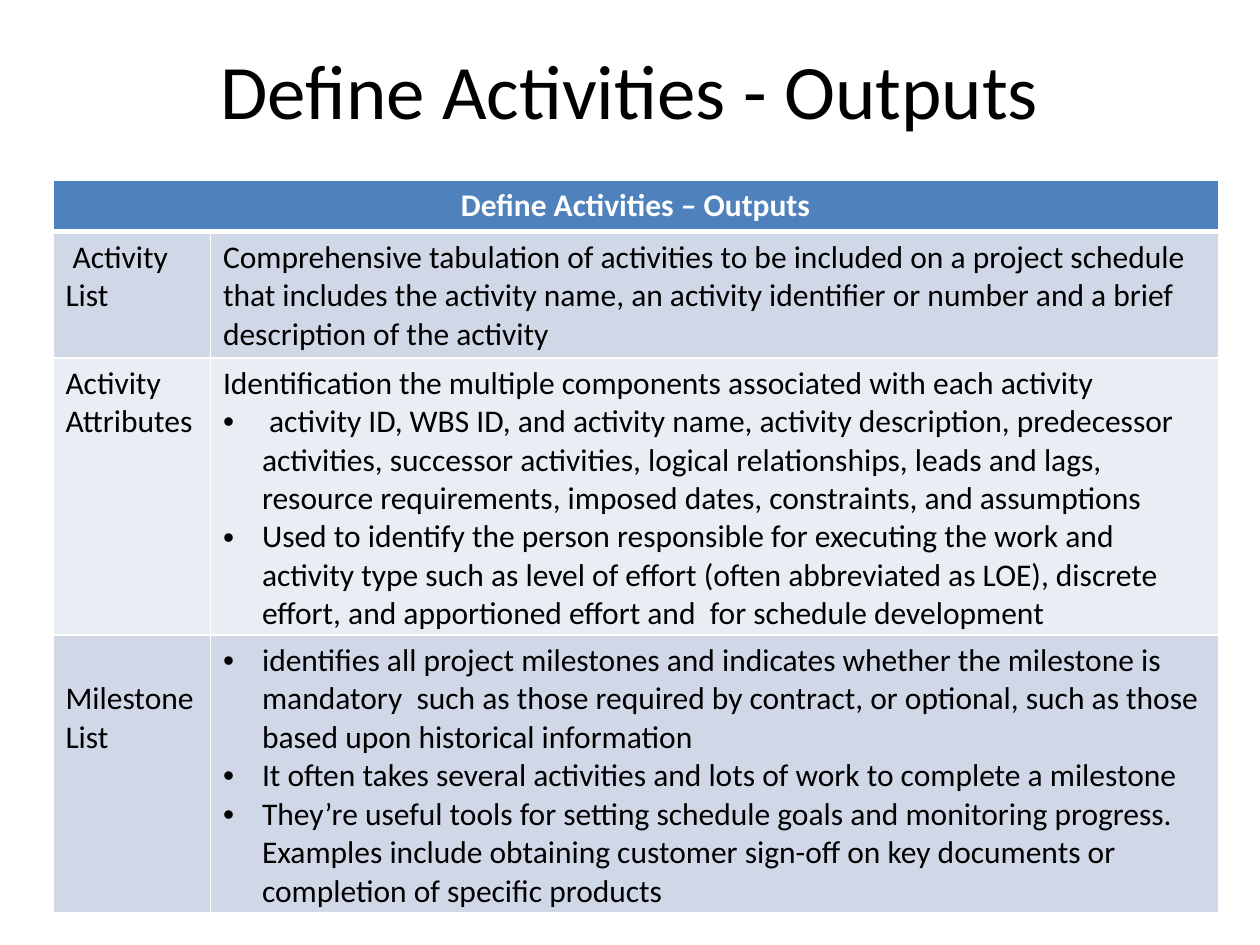
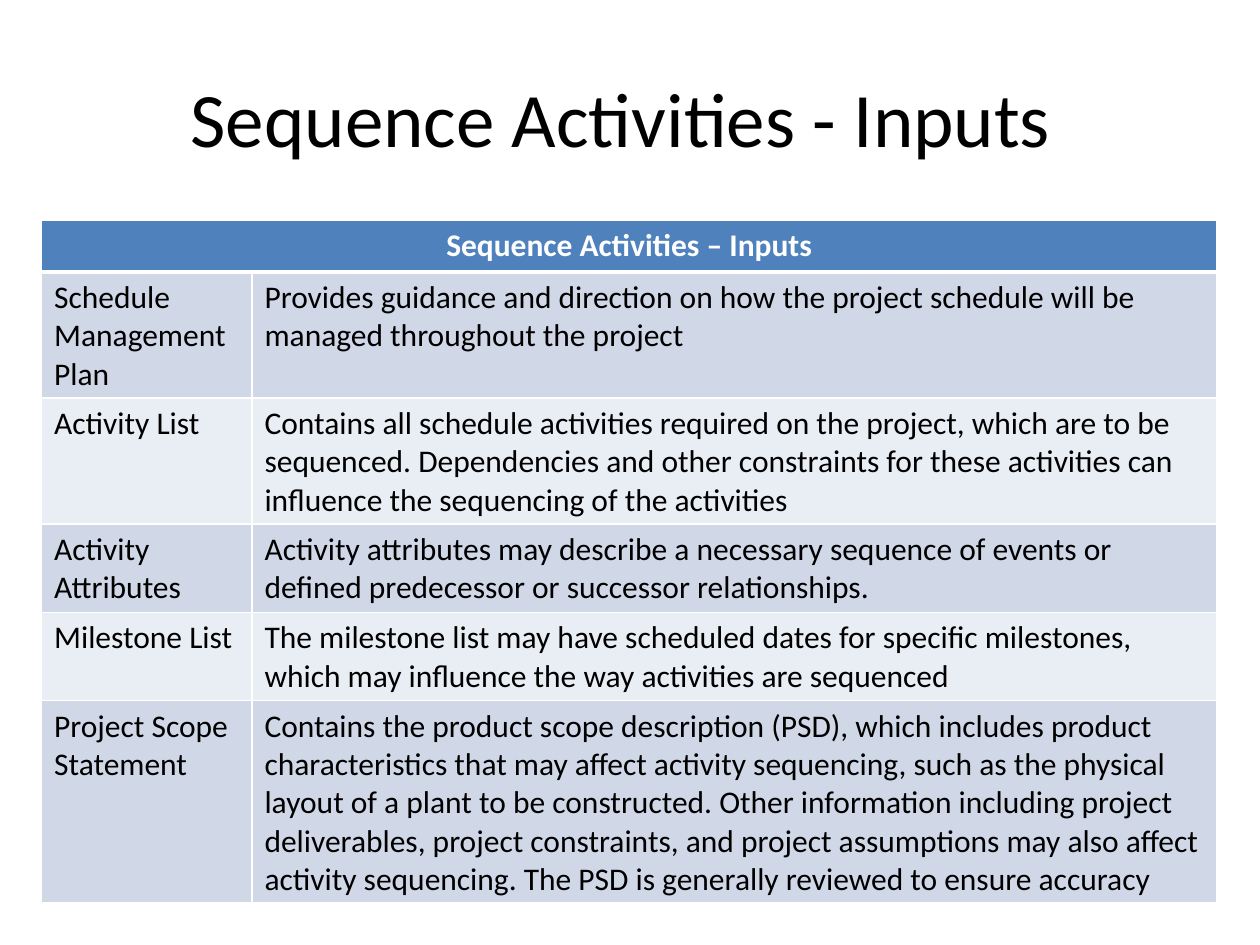
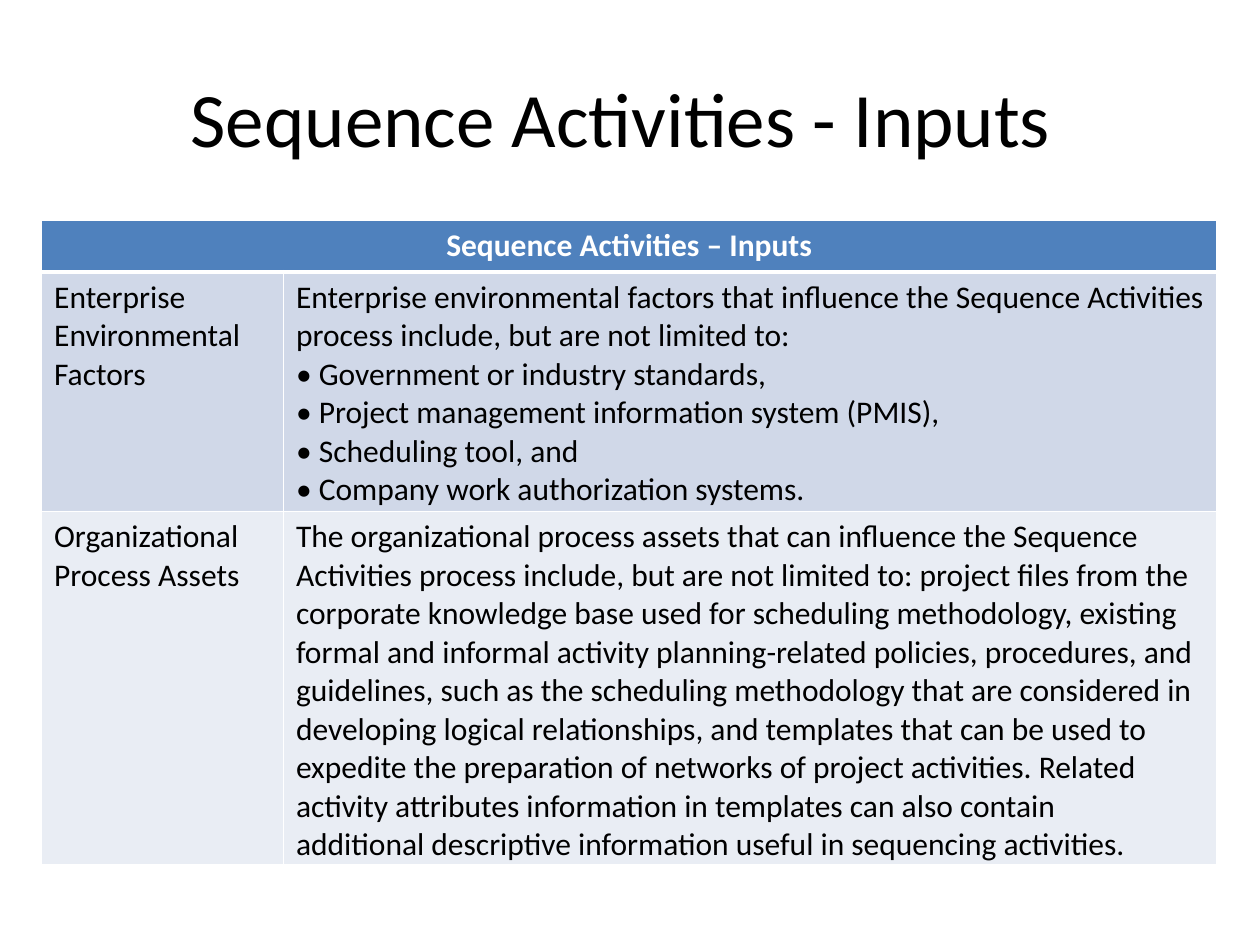
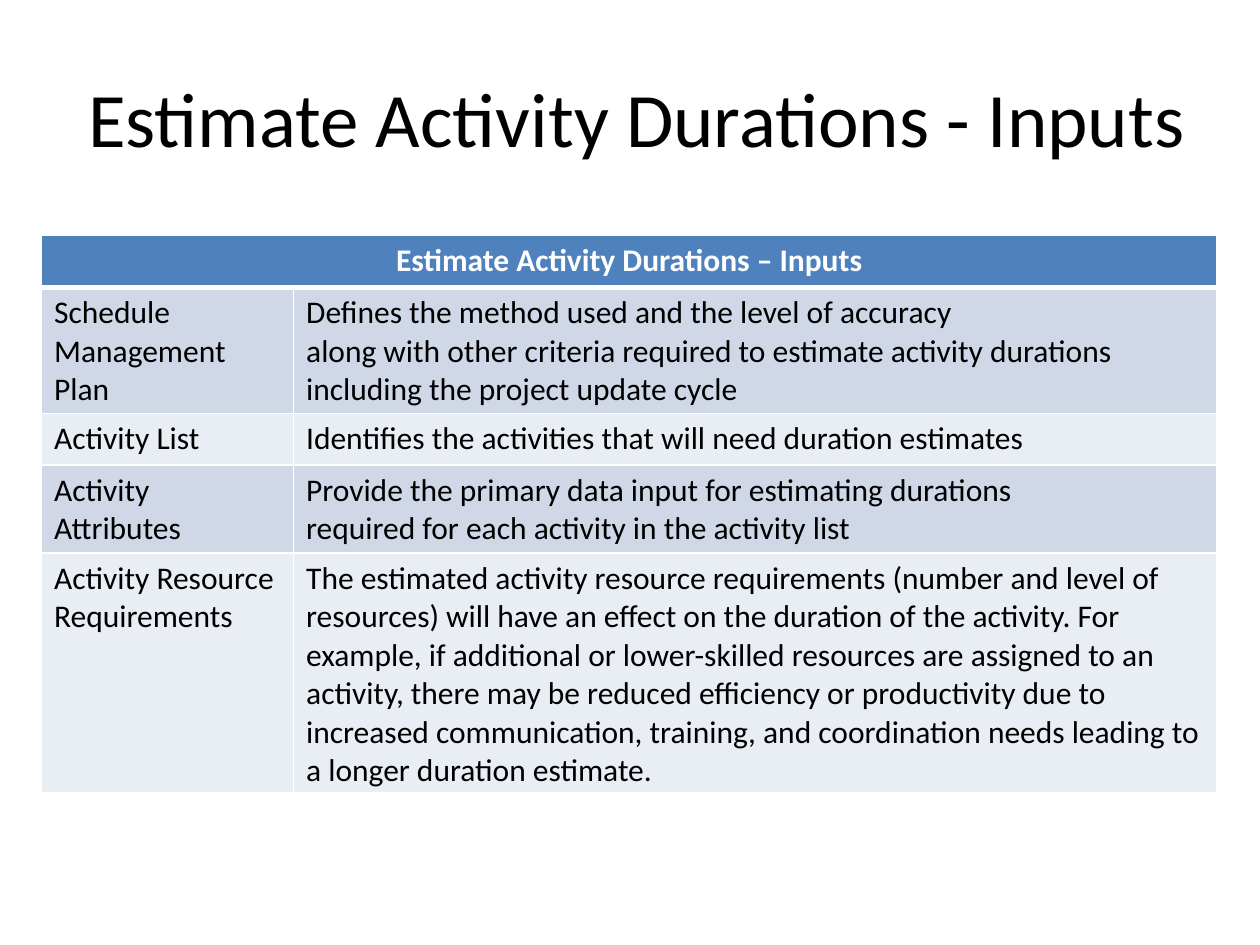
from dataclasses import dataclass

from lxml.etree import SubElement as add_element
from pptx import Presentation
from pptx.dml.color import RGBColor as Color
from pptx.enum.text import MSO_ANCHOR as Anchor, PP_ALIGN as Align
from pptx.oxml.ns import qn
from pptx.util import Inches, Pt


@dataclass(frozen=True)
class Theme:
    """Colours, font and type sizes shared by every slide."""
    font: str = "Calibri"
    title_size: int = 44
    table_size: int = 18
    ink: str = "000000"
    paper: str = "FFFFFF"
    header: str = "4F81BD"
    bands: tuple = ("D0D8E8", "E9EDF4")
    rule: int = 1
    header_rule: int = 3
    row_height: float = 0.41
    bullet_indent: float = 0.31


class Bullet(str):
    """A paragraph that carries a bullet."""


THEME = Theme()
TITLE_BOX = (0.5, 0.3, 9, 1.25)

PAGES = [
    {
        "title": "Define Activities - Outputs",
        "title_box": (0.5, 0.08, 9, 1.25),
        "heading": "Define Activities – Outputs",
        "table_box": (0.42, 1.43, 9.25, 5.81),
        "label_width": 1.25,
        "rows": [
            (" Activity List", [
                "Comprehensive tabulation of activities to be included on a project schedule "
                "that includes the activity name, an activity identifier or number and a brief "
                "description of the activity"]),
            ("Activity Attributes", [
                "Identification the multiple components associated with each activity",
                Bullet(" activity ID, WBS ID, and activity name, activity description, predecessor "
                       "activities, successor activities, logical relationships, leads and lags, "
                       "resource requirements, imposed dates, constraints, and assumptions"),
                Bullet("Used to identify the person responsible for executing the work and "
                       "activity type such as level of effort (often abbreviated as LOE), discrete "
                       "effort, and apportioned effort and  for schedule development")]),
            (" Milestone List", [
                Bullet("identifies all project milestones and indicates whether the milestone is "
                       "mandatory  such as those required by contract, or optional, such as those "
                       "based upon historical information"),
                Bullet("It often takes several activities and lots of work to complete a milestone"),
                Bullet("They’re useful tools for setting schedule goals and monitoring progress. "
                       "Examples include obtaining customer sign-off on key documents or "
                       "completion of specific products")]),
        ],
    },
    {
        "title": "Sequence Activities - Inputs ",
        "title_box": TITLE_BOX,
        "heading": "Sequence Activities – Inputs",
        "table_box": (0.33, 1.75, 9.33, 5.41),
        "label_width": 1.67,
        "rows": [
            ("Schedule Management Plan", [
                "Provides guidance and direction on how the project schedule will be "
                "managed throughout the project"]),
            ("Activity List", [
                "Contains all schedule activities required on the project, which are to be "
                "sequenced. Dependencies and other constraints for these activities can "
                "influence the sequencing of the activities"]),
            ("Activity Attributes", [
                "Activity attributes may describe a necessary sequence of events or "
                "defined predecessor or successor relationships."]),
            ("Milestone List", [
                "The milestone list may have scheduled dates for specific milestones, "
                "which may influence the way activities are sequenced"]),
            ("Project Scope Statement", [
                "Contains the product scope description (PSD), which includes product "
                "characteristics that may affect activity sequencing, such as the physical "
                "layout of a plant to be constructed. Other information including project "
                "deliverables, project constraints, and project assumptions may also affect "
                "activity sequencing. The PSD is generally reviewed to ensure accuracy"]),
        ],
    },
    {
        "title": "Sequence Activities - Inputs ",
        "title_box": TITLE_BOX,
        "heading": "Sequence Activities – Inputs",
        "table_box": (0.33, 1.75, 9.33, 5.11),
        "label_width": 1.92,
        "rows": [
            ("Enterprise Environmental Factors", [
                "Enterprise environmental factors that influence the Sequence Activities "
                "process include, but are not limited to:",
                "• Government or industry standards,",
                "• Project management information system (PMIS),",
                "• Scheduling tool, and",
                "• Company work authorization systems."]),
            ("Organizational Process Assets", [
                "The organizational process assets that can influence the Sequence "
                "Activities process include, but are not limited to: project files from the "
                "corporate knowledge base used for scheduling methodology, existing "
                "formal and informal activity planning-related policies, procedures, and "
                "guidelines, such as the scheduling methodology that are considered in "
                "developing logical relationships, and templates that can be used to "
                "expedite the preparation of networks of project activities. Related "
                "activity attributes information in templates can also contain",
                "additional descriptive information useful in sequencing activities."]),
        ],
    },
    {
        "title": "Estimate Activity Durations - Inputs ",
        "title_box": (0.5, 0.3, 9.25, 1.25),
        "heading": "Estimate Activity Durations – Inputs",
        "table_box": (0.33, 1.87, 9.33, 4.41),
        "label_width": 2,
        "rows": [
            ("Schedule Management Plan", [
                "Defines the method used and the level of accuracy",
                "along with other criteria required to estimate activity durations "
                "including the project update cycle"]),
            ("Activity List", [
                "Identifies the activities that will need duration estimates"]),
            ("Activity Attributes", [
                "Provide the primary data input for estimating durations",
                "required for each activity in the activity list"]),
            ("Activity Resource Requirements", [
                "The estimated activity resource requirements (number and level of "
                "resources) will have an effect on the duration of the activity. For "
                "example, if additional or lower-skilled resources are assigned to an "
                "activity, there may be reduced efficiency or productivity due to "
                "increased communication, training, and coordination needs leading to "
                "a longer duration estimate."]),
        ],
    },
]


def apply(target, formats):
    """Set each attribute named in formats on the target."""
    for name, value in formats.items():
        setattr(target, name, value)


def add_bullet(para):
    """Give the paragraph a hanging bullet."""
    indent = Inches(THEME.bullet_indent)
    props = para._p.get_or_add_pPr()
    props.set("marL", str(indent))
    props.set("indent", str(-indent))
    add_element(props, qn("a:buFont"), typeface="Arial")
    add_element(props, qn("a:buChar"), char="•")


def write(frame, texts, size, color=THEME.ink, bold=False, align=Align.LEFT):
    """Write one paragraph for each text."""
    for index, text in enumerate(texts):
        para = frame.add_paragraph() if index else frame.paragraphs[0]
        para.alignment = align
        if isinstance(text, Bullet):
            add_bullet(para)
        span = para.add_run()
        span.text = text
        apply(span.font, {"name": THEME.font, "size": Pt(size), "bold": bold})
        span.font.color.rgb = Color.from_string(color)


def style_cell(cell, fill, top, bottom):
    """Draw the cell borders and fill the cell."""
    props = cell._tc.get_or_add_tcPr()
    widths = {"L": THEME.rule, "R": THEME.rule, "T": top, "B": bottom}
    for side, width in widths.items():
        line = add_element(props, qn(f"a:ln{side}"), w=str(Pt(width)))
        paint = add_element(line, qn("a:solidFill"))
        add_element(paint, qn("a:srgbClr"), val=THEME.paper)
    cell.fill.solid()
    cell.fill.fore_color.rgb = Color.from_string(fill)


def add_title(page, box, text):
    """Place the centred slide title in its box."""
    frame = page.shapes.add_textbox(*map(Inches, box)).text_frame
    apply(frame, {"word_wrap": True, "vertical_anchor": Anchor.MIDDLE})
    write(frame, [text], THEME.title_size, align=Align.CENTER)


def add_process_table(page, box, heading, label_width, rows):
    """Place a table with a merged heading and banded rows in its box."""
    left, top, width, height = map(Inches, box)
    holder = page.shapes.add_table(len(rows) + 1, 2, left, top, width, height)
    table = holder.table
    table.columns[0].width = Inches(label_width)
    table.columns[1].width = width - Inches(label_width)
    for row in table.rows:
        row.height = Inches(THEME.row_height)
    holder.height = height

    for cell in table.rows[0].cells:
        style_cell(cell, THEME.header, THEME.rule, THEME.header_rule)
    title_cell = table.cell(0, 0)
    title_cell.merge(table.cell(0, 1))
    write(title_cell.text_frame, [heading], THEME.table_size, THEME.paper, True, Align.CENTER)

    for index, (label, details) in enumerate(rows):
        fill = THEME.bands[index % len(THEME.bands)]
        upper = THEME.rule if index else THEME.header_rule
        for cell, texts in zip(table.rows[index + 1].cells, ([label], details)):
            style_cell(cell, fill, upper, THEME.rule)
            write(cell.text_frame, texts, THEME.table_size)


def add_process_page(deck, content):
    """Add a slide with a title and its table."""
    page = deck.slides.add_slide(deck.slide_layouts[6])
    add_title(page, content["title_box"], content["title"])
    add_process_table(page, content["table_box"], content["heading"],
                      content["label_width"], content["rows"])


def main():
    """Build and save the deck."""
    deck = Presentation()
    apply(deck, {"slide_width": Inches(10), "slide_height": Inches(7.5)})
    for content in PAGES:
        add_process_page(deck, content)
    deck.save("out.pptx")


if __name__ == "__main__":
    main()
